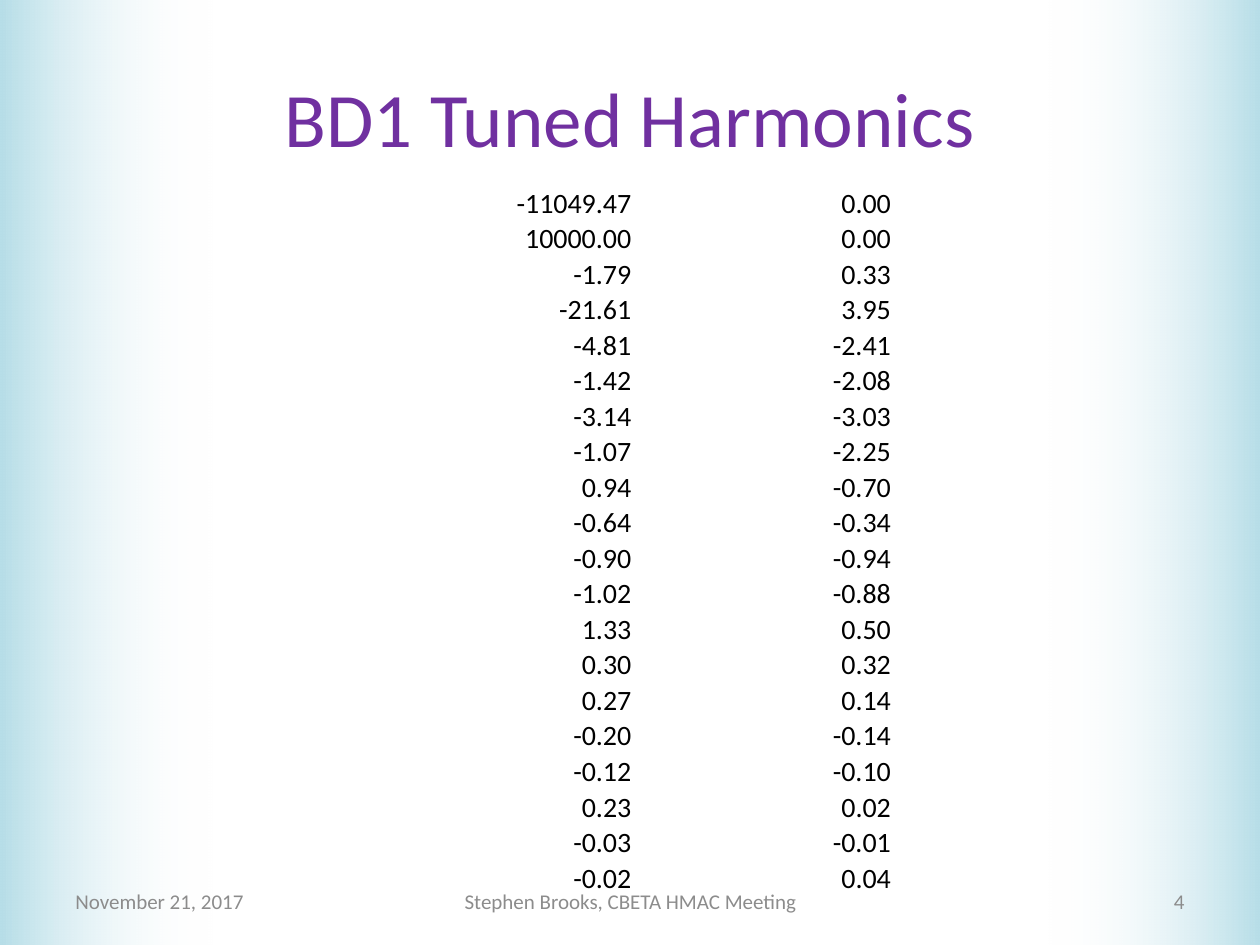
import pptx
import pptx.dml.color
import pptx.enum.shapes
import pptx.enum.text
import pptx.oxml
import pptx.oxml.ns
import pptx.util

Inches = pptx.util.Inches
ALIGN = pptx.enum.text.PP_ALIGN
ANCHOR = pptx.enum.text.MSO_ANCHOR

HARMONICS = [
    ("-11049.47", "0.00"),
    ("10000.00", "0.00"),
    ("-1.79", "0.33"),
    ("-21.61", "3.95"),
    ("-4.81", "-2.41"),
    ("-1.42", "-2.08"),
    ("-3.14", "-3.03"),
    ("-1.07", "-2.25"),
    ("0.94", "-0.70"),
    ("-0.64", "-0.34"),
    ("-0.90", "-0.94"),
    ("-1.02", "-0.88"),
    ("1.33", "0.50"),
    ("0.30", "0.32"),
    ("0.27", "0.14"),
    ("-0.20", "-0.14"),
    ("-0.12", "-0.10"),
    ("0.23", "0.02"),
    ("-0.03", "-0.01"),
    ("-0.02", "0.04"),
]


def rgb(value):
    return pptx.dml.color.RGBColor.from_string(value)


def set_all(obj, values):
    for name, value in values.items():
        setattr(obj, name, value)


class SlideBuilder:
    font = "Calibri"
    purple, black, grey = "7030A0", "000000", "8C8C8C"
    band_color, white = "B7DEE8", "FFFFFF"
    cell_format = {
        "margin_left": Inches(0.01),
        "margin_right": Inches(0.01),
        "margin_top": Inches(0.01),
        "margin_bottom": 0,
        "vertical_anchor": ANCHOR.BOTTOM,
    }

    def __init__(self, prs):
        self.slide = prs.slides.add_slide(prs.slide_layouts[5])

    def add_text(self, tf, text, size, color, align):
        p = tf.paragraphs[0]
        p.alignment = align
        r = p.add_run()
        r.text = text
        set_all(r.font, {"name": self.font, "size": pptx.util.Pt(size)})
        r.font.color.rgb = rgb(color)

    def title(self, text, left, top, width, height):
        sp = self.slide.shapes.title
        set_all(sp, {"left": Inches(left), "top": Inches(top),
                     "width": Inches(width), "height": Inches(height)})
        sp.text_frame.vertical_anchor = ANCHOR.MIDDLE
        self.add_text(sp.text_frame, text, 44, self.purple, ALIGN.CENTER)

    def edge_band(self, left, width, rotation):
        """Add a full-height band behind the title that fades out."""
        sp = self.slide.shapes.add_shape(
            pptx.enum.shapes.MSO_SHAPE.RECTANGLE,
            Inches(left), 0, Inches(width), Inches(7.5))
        sp.rotation = rotation
        sp.shadow.inherit = False
        sp.line.fill.background()
        sp.fill.gradient()
        sp.fill.gradient_angle = 0
        for stop, color in zip(sp.fill.gradient_stops, (self.band_color, self.white)):
            stop.color.rgb = rgb(color)
        end_color = list(sp.element.iter(pptx.oxml.ns.qn("a:srgbClr")))[-1]
        end_color.append(pptx.oxml.parse_xml(
            f'<a:alpha {pptx.oxml.ns.nsdecls("a")} val="0"/>'))
        self.slide.shapes.title.element.addprevious(sp.element)

    def table(self, rows, left, top, widths, height):
        table = self.slide.shapes.add_table(
            len(rows), len(widths), Inches(left), Inches(top),
            Inches(sum(widths)), Inches(height)).table
        set_all(table, {"first_row": False, "horz_banding": False})
        for column, width in zip(table.columns, widths):
            column.width = Inches(width)
        for row, values in zip(table.rows, rows):
            for cell, value in zip(row.cells, values):
                set_all(cell, self.cell_format)
                cell.fill.background()
                self.add_text(cell.text_frame, value, 16, self.black, ALIGN.RIGHT)

    def footer(self, text, left, width, align):
        sp = self.slide.shapes.add_textbox(
            Inches(left), Inches(6.95), Inches(width), Inches(0.4))
        set_all(sp.text_frame, {"word_wrap": True, "vertical_anchor": ANCHOR.MIDDLE})
        self.add_text(sp.text_frame, text, 12, self.grey, align)


def main():
    prs = pptx.Presentation()
    set_all(prs, {"slide_width": Inches(10), "slide_height": Inches(7.5)})
    s = SlideBuilder(prs)
    s.edge_band(8.31, 1.69, 180)
    s.edge_band(0, 1.69, 0)
    s.title("BD1 Tuned Harmonics", 0.5, 0.3, 9, 1.25)
    s.table(HARMONICS, 2.92, 1.47, (2.1, 2.06), 5.5)
    s.footer("November 21, 2017", 0.5, 2.33, ALIGN.LEFT)
    s.footer("Stephen Brooks, CBETA HMAC Meeting", 3.42, 3.17, ALIGN.CENTER)
    s.footer("4", 7.17, 2.33, ALIGN.RIGHT)
    prs.save("out.pptx")


if __name__ == "__main__":
    main()
